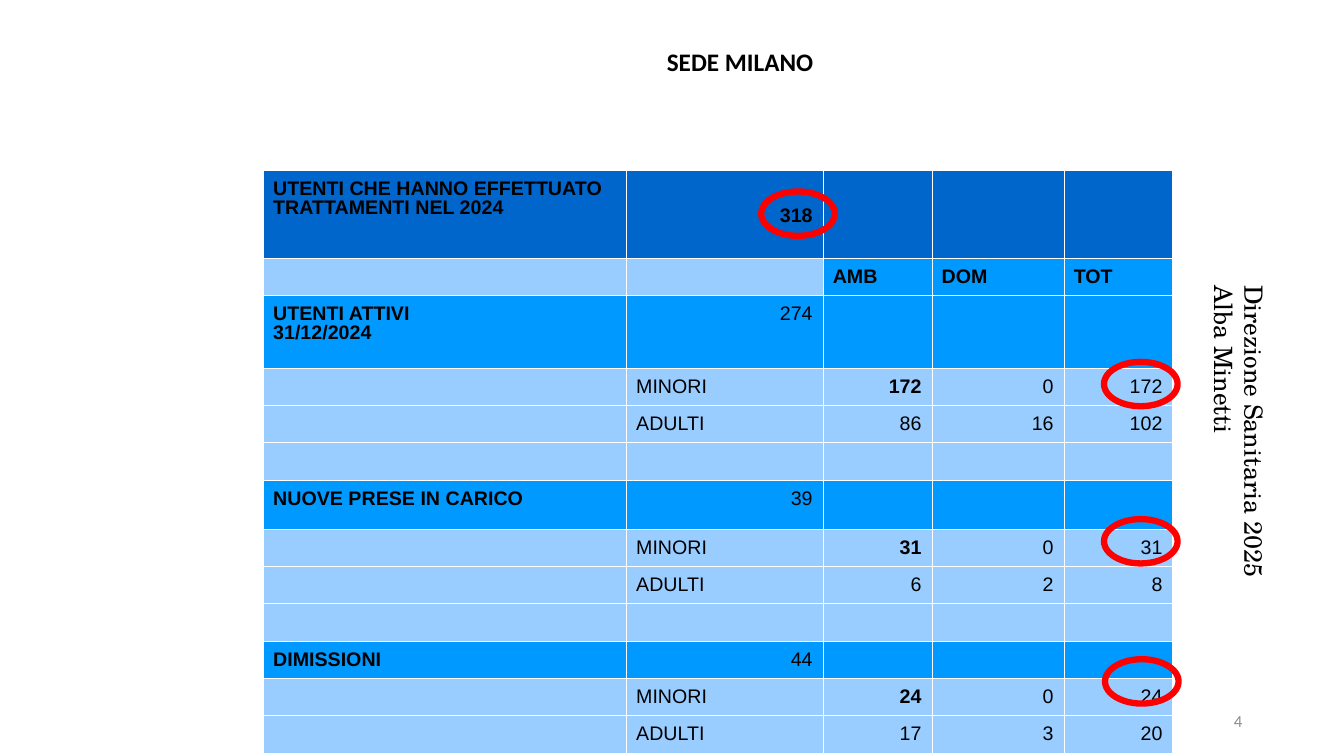
from lxml.etree import SubElement
from pptx import Presentation
from pptx.dml.color import RGBColor
from pptx.enum.shapes import MSO_SHAPE as Shape
from pptx.enum.text import MSO_ANCHOR as Anchor, PP_ALIGN as Align
from pptx.oxml.ns import qn
from pptx.util import Inches, Pt

NAVY, BLUE, PALE = "0066CC", "0099FF", "99CCFF"
COLUMNS = [3.6, 1.95, 1.08, 1.31, 1.08]
SECTIONS = [
    ("UTENTI ATTIVI\n31/12/2024", "274", 0.72, ("172", "0", "172"), ("86", "16", "102")),
    ("NUOVE PRESE IN CARICO", "39", 0.49, ("31", "0", "31"), ("6", "2", "8")),
    ("DIMISSIONI", "44", 0.37, ("24", "0", "24"), ("17", "3", "20")),
]
ROW_HEIGHT = 0.37
RINGS = [(10.95, 3.59), (7.55, 1.9), (10.95, 5.15), (10.96, 6.54)]


def color(value):
    return RGBColor.from_string(value)


def write(frame, text, font="Arial", size=14, ink="000000", bold=False,
          align=Align.LEFT, spacing=None):
    for index, line in enumerate(text.split("\n")):
        paragraph = frame.add_paragraph() if index else frame.paragraphs[0]
        paragraph.alignment = align
        paragraph.line_spacing = spacing
        run = paragraph.add_run()
        run.text = line
        run.font.name, run.font.size, run.font.bold = font, Pt(size), bold
        run.font.color.rgb = color(ink)


class SlideBuilder:
    """Draws the elements of one slide in a shared style."""

    def __init__(self, slide):
        self.slide = slide
        self.border = "FFFFFF"
        self.ring = "FF0000"

    def add_text(self, text, left, top, width, height, rotation=0,
                 anchor=Anchor.TOP, **style):
        shape = self.slide.shapes.add_textbox(
            Inches(left), Inches(top), Inches(width), Inches(height))
        shape.rotation = rotation
        shape.text_frame.word_wrap = True
        shape.text_frame.vertical_anchor = anchor
        write(shape.text_frame, text, **style)

    def add_ring(self, left, top):
        shape = self.slide.shapes.add_shape(
            Shape.OVAL, Inches(left), Inches(top), Inches(0.73), Inches(0.44))
        shape.shadow.inherit = False
        shape.fill.background()
        shape.line.color.rgb = color(self.ring)
        shape.line.width = Pt(4.5)

    def fill_cell(self, cell, fill, text="", **style):
        properties = cell._tc.get_or_add_tcPr()
        for side in ("a:lnL", "a:lnR", "a:lnT", "a:lnB"):
            line = SubElement(properties, qn(side), w=str(Pt(0.11)))
            solid = SubElement(line, qn("a:solidFill"))
            SubElement(solid, qn("a:srgbClr"), val=self.border)
        cell.fill.solid()
        cell.fill.fore_color.rgb = color(fill)
        cell.margin_left = cell.margin_right = Inches(0.1)
        cell.margin_top = Inches(0.1 if text else 0.02)
        cell.margin_bottom = Inches(0.05 if text else 0.02)
        if text:
            write(cell.text_frame, text, spacing=0.87, **style)

    def add_table(self, left, top, columns, rows):
        height = sum(row_height for row_height, _ in rows)
        table = self.slide.shapes.add_table(
            len(rows), len(columns), Inches(left), Inches(top),
            Inches(sum(columns)), Inches(height)).table
        for column, width in zip(table.columns, columns):
            column.width = Inches(width)
        for row, (row_height, cells) in zip(table.rows, rows):
            row.height = Inches(row_height)
            for cell, (fill, text, bold) in zip(row.cells, cells):
                align = Align.RIGHT if text.isdigit() else Align.LEFT
                self.fill_cell(cell, fill, text, bold=bold, align=align)
        return table


def table_row(fill, texts, bold_columns=(), height=ROW_HEIGHT):
    texts = list(texts) + [""] * (len(COLUMNS) - len(texts))
    return height, [(fill, text, index in bold_columns) for index, text in enumerate(texts)]


def table_rows():
    blank = table_row(PALE, [])
    labels = [(BLUE, label, True) for label in ("AMB", "DOM", "TOT")]
    rows = [
        table_row(NAVY, ["UTENTI CHE HANNO EFFETTUATO TRATTAMENTI NEL 2024", "318"], (0, 1), 0.87),
        (ROW_HEIGHT, blank[1][:2] + labels),
    ]
    for index, (name, total, height, minors, adults) in enumerate(SECTIONS):
        if index:
            rows.append(blank)
        rows.append(table_row(BLUE, [name, total], (0,), height))
        rows.append(table_row(PALE, ["", "MINORI", *minors], (2,)))
        rows.append(table_row(PALE, ["", "ADULTI", *adults]))
    return rows


def main():
    presentation = Presentation()
    presentation.slide_width, presentation.slide_height = Inches(13.33), Inches(7.5)
    builder = SlideBuilder(presentation.slides.add_slide(presentation.slide_layouts[6]))
    builder.add_text("SEDE MILANO", 4.07, 0.2, 6.54, 0.85, anchor=Anchor.MIDDLE,
                     font="Calibri", size=18, bold=True, align=Align.CENTER, spacing=0.9)
    builder.add_text("Direzione Sanitaria 2025 Alba Minetti", 10.69, 4.28, 3.5, 0.4,
                     rotation=90, font="TeX Gyre Schola", size=18)
    table = builder.add_table(2.61, 1.69, COLUMNS, table_rows())
    table.cell(0, 1).vertical_anchor = Anchor.MIDDLE
    builder.add_text("4", 9.42, 6.95, 3, 0.4, anchor=Anchor.MIDDLE,
                     font="Calibri", size=12, ink="8C8C8C", align=Align.RIGHT)
    for left, top in RINGS:
        builder.add_ring(left, top)
    presentation.save("out.pptx")


if __name__ == "__main__":
    main()
